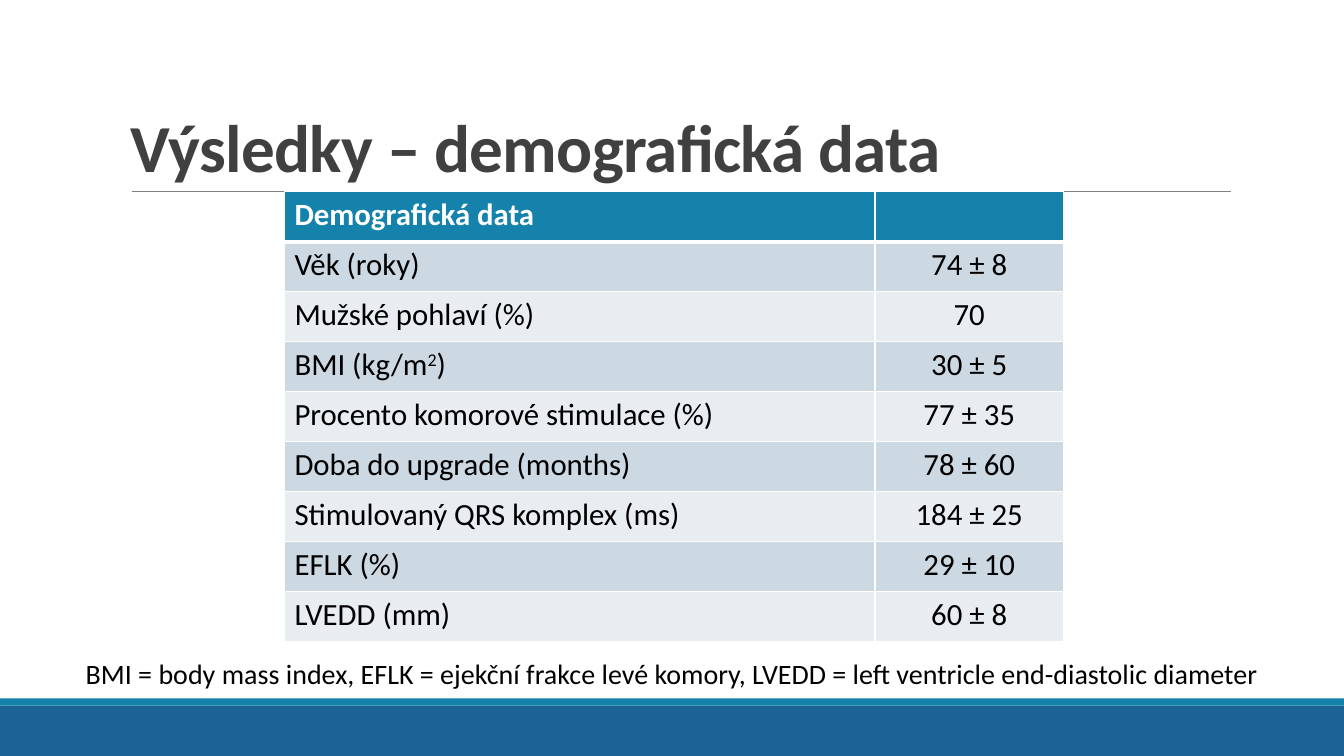
"""Build the slide with the table of demographic results."""
import pptx
import pptx.util
from lxml import etree
from pptx.dml.color import RGBColor
from pptx.enum.shapes import MSO_CONNECTOR, MSO_SHAPE
from pptx.enum.text import MSO_ANCHOR, PP_ALIGN
from pptx.oxml.ns import qn
from pptx.util import Cm, Pt

COLORS = {
    "footer": "1C6294",
    "accent": "1482AB",
    "rule": "808080",
    "title": "404040",
    "text": "000000",
    "white": "FFFFFF",
    "band_dark": "CCD8E2",
    "band_light": "E7EDF1",
}
FONT = "Calibri"
HEADER = [["Demografická data"], [""]]
ROWS = [
    [["Věk (roky)"], ["74 ± 8"]],
    [["Mužské pohlaví (%)"], ["70"]],
    [["BMI (kg/m", "2", ")"], ["30 ± 5"]],
    [["Procento komorové stimulace (%)"], ["77 ± 35"]],
    [["Doba do upgrade (months)"], ["78 ± 60"]],
    [["Stimulovaný QRS komplex (ms)"], ["184 ± 25"]],
    [["EFLK (%)"], ["29 ± 10"]],
    [["LVEDD (mm)"], ["60 ± 8"]],
]
ABBREVIATIONS = (
    "BMI = body mass index, EFLK = ejekční frakce levé komory, "
    "LVEDD = left ventricle end-diastolic diameter"
)


def rgb(name):
    return RGBColor.from_string(COLORS[name])


def set_font(p, size, color, bold=False):
    p.font.name = FONT
    p.font.size = Pt(size)
    p.font.color.rgb = rgb(color)
    p.font.bold = bold


def add_bar(s, top, height, color):
    sp = s.shapes.add_shape(MSO_SHAPE.RECTANGLE, 0, Cm(top), Cm(33.87), Cm(height))
    sp.shadow.inherit = False
    sp.fill.solid()
    sp.fill.fore_color.rgb = rgb(color)
    sp.line.fill.background()


def add_rule(s, left, right, y):
    line = s.shapes.add_connector(MSO_CONNECTOR.STRAIGHT, Cm(left), Cm(y), Cm(right), Cm(y))
    line.line.color.rgb = rgb("rule")
    line.line.width = Pt(0.5)
    etree.SubElement(line._element.spPr, qn("a:effectLst"))


def add_text(s, text, left, top, width, height, size, color, bold=False):
    tf = s.shapes.add_textbox(Cm(left), Cm(top), Cm(width), Cm(height)).text_frame
    tf.word_wrap = True
    p = tf.paragraphs[0]
    p.add_run().text = text
    set_font(p, size, color, bold)
    return tf


def add_title(s, text):
    tf = add_text(s, text, 3.05, 0.79, 27.94, 4.04, 48, "title", True)
    tf.vertical_anchor = MSO_ANCHOR.BOTTOM
    p = tf.paragraphs[0]
    p.line_spacing = 0.85
    p.runs[0]._r.get_or_add_rPr().set("spc", "-50")


def set_borders(cell, top, bottom):
    tcPr = cell._tc.get_or_add_tcPr()
    for side, width in (("L", 1), ("R", 1), ("T", top), ("B", bottom)):
        ln = etree.SubElement(tcPr, qn(f"a:ln{side}"), w=str(Pt(width)))
        fill = etree.SubElement(ln, qn("a:solidFill"))
        etree.SubElement(fill, qn("a:srgbClr"), val=COLORS["white"])


def fill_cell(cell, parts, row, col):
    is_header = row == 0
    set_borders(cell, 3 if row == 1 else 1, 3 if is_header else 1)
    cell.fill.solid()
    band = "band_dark" if row % 2 else "band_light"
    cell.fill.fore_color.rgb = rgb("accent" if is_header else band)
    p = cell.text_frame.paragraphs[0]
    set_font(p, 22, "white" if is_header else "text", is_header)
    if col == 1:
        p.alignment = PP_ALIGN.CENTER
    for i, part in enumerate(parts):
        r = p.add_run()
        r.text = part
        if i == 1:
            r._r.get_or_add_rPr().set("baseline", "30000")


def add_data_table(s, rows, left, top, widths, row_height):
    frame = s.shapes.add_table(len(rows), len(widths), Cm(left), Cm(top),
                               Cm(sum(widths)), Cm(row_height * len(rows)))
    table = frame.table
    for column, width in zip(table.columns, widths):
        column.width = Cm(width)
    for i, row in enumerate(rows):
        table.rows[i].height = Cm(row_height)
        for j, parts in enumerate(row):
            fill_cell(table.cell(i, j), parts, i, j)


def main():
    prs = pptx.Presentation()
    prs.slide_width, prs.slide_height = Cm(33.87), Cm(19.05)
    s = prs.slides.add_slide(prs.slide_layouts[6])
    add_bar(s, 17.78, 1.27, "footer")
    add_bar(s, 17.6, 0.18, "accent")
    add_rule(s, 3.33, 31.01, 4.83)
    add_title(s, "Výsledky – demografická data")
    add_data_table(s, [HEADER] + ROWS, 7.17, 4.83, [14.88, 4.75], 1.26)
    tf = add_text(s, ABBREVIATIONS, 0.97, 16.43, 31.93, 1.12, 20, "text")
    tf.paragraphs[0].alignment = PP_ALIGN.CENTER
    prs.save("out.pptx")


if __name__ == "__main__":
    main()
